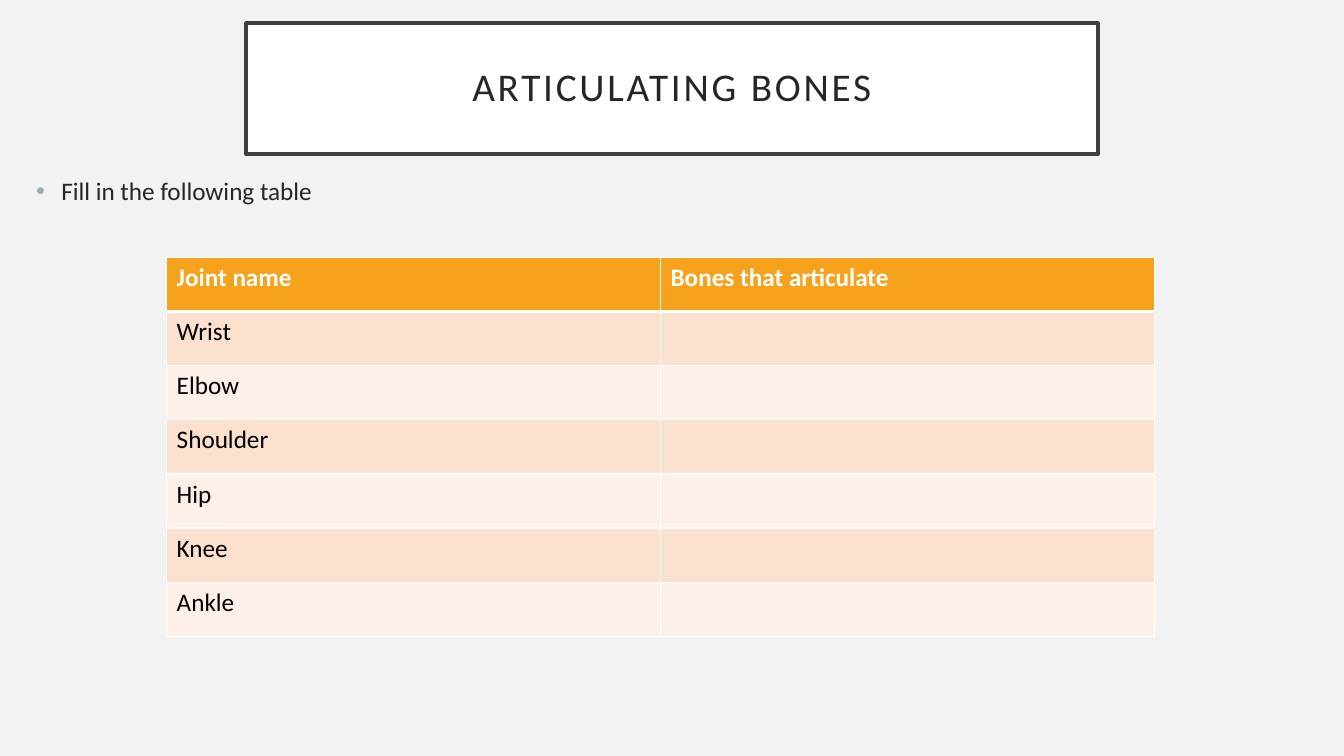
from pptx import Presentation
from pptx import util as u
from pptx.dml.color import RGBColor
from pptx.enum import shapes, text
from pptx.oxml import parse_xml
from pptx.oxml.ns import nsdecls

JOINTS = ["Wrist", "Elbow", "Shoulder", "Hip", "Knee", "Ankle"]
HEADINGS = ["Joint name", "Bones that articulate"]


def color(value):
    return RGBColor.from_string(value)


def write(frame, words, size=18, ink="262626", bold=False, align=text.PP_ALIGN.LEFT,
          tracking=0, line_spacing=None, before=None):
    paragraph = frame.paragraphs[0]
    paragraph.alignment = align
    paragraph.line_spacing = line_spacing
    paragraph.space_before = before
    run = paragraph.add_run()
    run.text = words
    run.font.name = "Calibri"
    run.font.size = u.Pt(size)
    run.font.bold = bold
    run.font.color.rgb = color(ink)
    if tracking:
        run.font._element.set("spc", str(tracking * 100))
    return paragraph


class Deck:
    """Holds the style and the current slide; lengths are percent of the slide's size."""

    header, bands, border = "F6A21D", ("FBE0CD", "FDF0E8"), "FFFFFF"

    def __init__(self):
        self.presentation = Presentation()
        self.presentation.slide_width = u.Inches(13.33)
        self.presentation.slide_height = u.Inches(7.5)
        self.slide = self.presentation.slides.add_slide(self.presentation.slide_layouts[6])
        self.slide.background.fill.solid()
        self.slide.background.fill.fore_color.rgb = color("F2F2F2")

    def area(self, left, top, width, height):
        across = self.presentation.slide_width / 100
        down = self.presentation.slide_height / 100
        return [int(length) for length in
                (left * across, top * down, width * across, height * down)]

    def title(self, words, *place):
        shape = self.slide.shapes.add_shape(shapes.MSO_SHAPE.RECTANGLE, *self.area(*place))
        shape.shadow.inherit = False
        shape.fill.solid()
        shape.fill.fore_color.rgb = color("FFFFFF")
        shape.line.color.rgb = color("404040")
        shape.line.width = u.Pt(2.5)
        frame = shape.text_frame
        frame.word_wrap = True
        frame.vertical_anchor = text.MSO_ANCHOR.MIDDLE
        for side in ("left", "top", "right", "bottom"):
            setattr(frame, f"margin_{side}", u.Inches(0.2))
        write(frame, words, size=28, align=text.PP_ALIGN.CENTER, tracking=2, line_spacing=0.9)

    def bullet(self, words, *place):
        frame = self.slide.shapes.add_textbox(*self.area(*place)).text_frame
        frame.word_wrap = True
        properties = write(frame, words, before=u.Pt(10))._p.get_or_add_pPr()
        properties.set("marL", str(u.Inches(0.25)))
        properties.set("indent", str(-u.Inches(0.25)))
        for mark in ('<a:buClr {}><a:srgbClr val="9BAFB5"/></a:buClr>',
                     '<a:buFont {} typeface="Arial"/>', '<a:buChar {} char="•"/>'):
            properties.append(parse_xml(mark.format(nsdecls("a"))))

    def cell(self, cell, words, fill, **style):
        cell.fill.solid()
        cell.fill.fore_color.rgb = color(fill)
        if words:
            write(cell.text_frame, words, **style)
        else:
            cell.text_frame.paragraphs[0].font.size = u.Pt(18)

    def borders(self, cell, **widths):
        properties = cell._tc.get_or_add_tcPr()
        for index, side in enumerate("LRTB"):
            properties.insert(index, parse_xml(
                f'<a:ln{side} {nsdecls("a")} w="{u.Pt(widths.get(side, 1))}"><a:solidFill>'
                f'<a:srgbClr val="{self.border}"/></a:solidFill></a:ln{side}>'))

    def table(self, headings, names, *place):
        shape = self.slide.shapes.add_table(len(names) + 1, len(headings), *self.area(*place))
        for column, heading in enumerate(headings):
            top_cell = shape.table.cell(0, column)
            self.cell(top_cell, heading, self.header, ink="FFFFFF", bold=True)
            self.borders(top_cell, B=3)
            for row, name in enumerate(names, 1):
                cell = shape.table.cell(row, column)
                self.cell(cell, "" if column else name, self.bands[(row - 1) % 2], ink="000000")
                self.borders(cell, T=3 if row == 1 else 1)


def main():
    deck = Deck()
    deck.title("ARTICULATING BONES", 18.3, 3.07, 63.4, 17.33)
    deck.bullet("Fill in the following table", 1.95, 22.53, 63.4, 45.2)
    deck.table(HEADINGS, JOINTS, 12.4, 34.05, 73.5, 50.15)
    deck.presentation.save("out.pptx")


if __name__ == "__main__":
    main()
